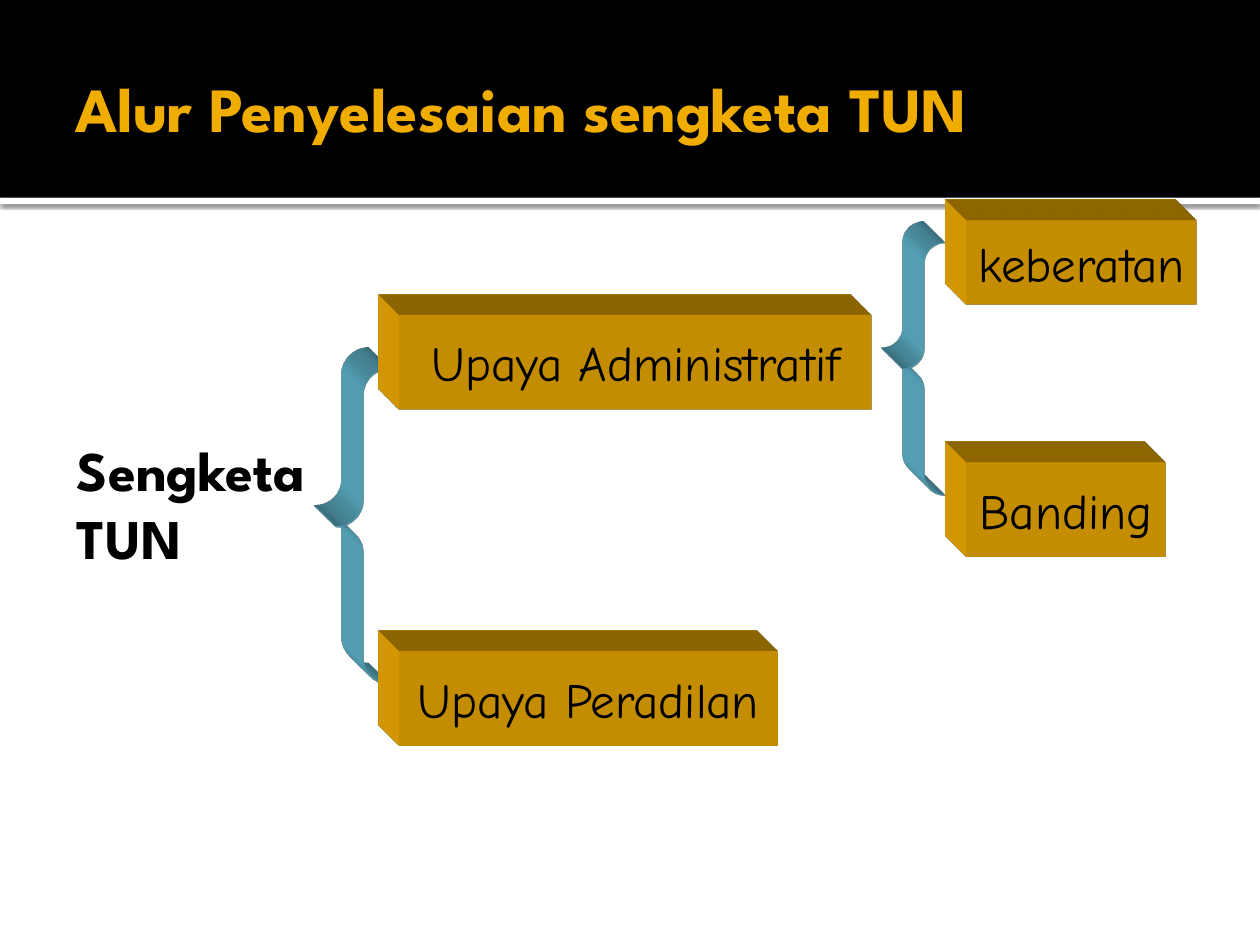
from dataclasses import dataclass
from lxml import etree
from pptx import Presentation
from pptx.dml.color import RGBColor
from pptx.enum.shapes import MSO_SHAPE
from pptx.enum.text import MSO_ANCHOR, PP_ALIGN
from pptx.util import Inches, Pt

NS = 'xmlns:a="http://schemas.openxmlformats.org/drawingml/2006/main"'


@dataclass(frozen=True)
class Theme:
    black: str = "000000"
    white: str = "FFFFFF"
    gold: str = "F0AD00"
    blue: str = "60B5CC"
    heading_font: str = "League Spartan"
    box_font: str = "Comic Neue"
    title_size: int = 36
    body_size: int = 32
    box_size: int = 28


class SlideBuilder:
    def __init__(self, slide, theme):
        self.s = slide
        self.theme = theme

    def shape(self, kind, at, fill=None, line=None):
        sp = self.s.shapes.add_shape(kind, *map(Inches, at))
        sp.shadow.inherit = False
        if fill:
            sp.fill.solid()
            sp.fill.fore_color.rgb = RGBColor.from_string(fill)
        else:
            sp.fill.background()
        if line:
            sp.line.color.rgb = RGBColor.from_string(line)
            sp.line.width = Pt(0.75)
        else:
            sp.line.fill.background()
        return sp

    def band(self, at, fill):
        return self.shape(MSO_SHAPE.RECTANGLE, at, fill)

    def soft_shadow(self, sp):
        effects = sp._element.spPr.find("{*}effectLst")
        effects.append(etree.fromstring(
            f'<a:outerShdw {NS} blurRad="31750" dist="10160" dir="5400000" algn="tl" '
            f'rotWithShape="0"><a:srgbClr val="{self.theme.black}">'
            '<a:alpha val="60000"/></a:srgbClr></a:outerShdw>'))

    def extrude(self, sp, color):
        """Give the shape depth towards the top left."""
        scene = (f'<a:scene3d {NS}><a:camera prst="legacyObliqueTopLeft"/>'
                 '<a:lightRig rig="legacyFlat3" dir="b"/></a:scene3d>')
        depth = (f'<a:sp3d {NS} extrusionH="430200" prstMaterial="legacyMatte">'
                 '<a:bevelT w="13500" h="13500" prst="angle"/>'
                 '<a:bevelB w="13500" h="13500" prst="angle"/>'
                 f'<a:extrusionClr><a:srgbClr val="{color}"/></a:extrusionClr></a:sp3d>')
        for xml in (scene, depth):
            sp._element.spPr.append(etree.fromstring(xml))

    def set_text(self, tf, lines, size, font, color, bold=False, align=PP_ALIGN.LEFT):
        for i, line in enumerate(lines):
            p = tf.add_paragraph() if i else tf.paragraphs[0]
            p.text = line
            p.alignment = align
            p.font.size = Pt(size)
            p.font.name = font
            p.font.bold = bold
            p.font.color.rgb = RGBColor.from_string(color)

    def heading(self, at, lines, size, color, left, top, anchor):
        tf = self.s.shapes.add_textbox(*map(Inches, at)).text_frame
        tf.word_wrap = True
        tf.vertical_anchor = anchor
        tf.margin_left, tf.margin_top = Inches(left), Inches(top)
        self.set_text(tf, lines, size, self.theme.heading_font, color, bold=True)

    def brace(self, at):
        sp = self.shape(MSO_SHAPE.LEFT_BRACE, at, line=self.theme.blue)
        sp.adjustments[0] = sp.adjustments[1] = 0.5
        self.extrude(sp, self.theme.blue)

    def box(self, at, text):
        t = self.theme
        sp = self.shape(MSO_SHAPE.RECTANGLE, at, t.gold)
        self.extrude(sp, t.gold)
        tf = sp.text_frame
        tf.word_wrap = False
        tf.vertical_anchor = MSO_ANCHOR.MIDDLE
        self.set_text(tf, [text], t.box_size, t.box_font, t.black, align=PP_ALIGN.CENTER)


def main():
    prs = Presentation()
    prs.slide_width, prs.slide_height = Inches(10), Inches(7.5)
    t = Theme()
    b = SlideBuilder(prs.slides.add_slide(prs.slide_layouts[6]), t)

    b.soft_shadow(b.band((0, 1.57, 10, 0.05), t.white))
    b.band((0, 0, 10, 1.57), t.black)
    b.heading((0.5, 0.17, 9, 1.37), ["Alur Penyelesaian sengketa TUN"],
              t.title_size, t.gold, 0.1, 0.05, MSO_ANCHOR.MIDDLE)
    b.heading((0.42, 1.75, 8.92, 4.83), ["Sengketa", "TUN"],
              t.body_size, t.black, 0.19, 1.71, MSO_ANCHOR.TOP)

    b.brace((2.67, 2.93, 0.42, 2.5))
    b.box((3.17, 5.17, 3, 0.75), "Upaya Peradilan")
    b.box((3.17, 2.5, 3.75, 0.75), "Upaya Administratif")

    b.brace((7.17, 1.93, 0.33, 2))
    b.box((7.67, 1.75, 1.83, 0.67), "keberatan")
    b.box((7.67, 3.67, 1.58, 0.75), "Banding")

    prs.save("out.pptx")


if __name__ == "__main__":
    main()
